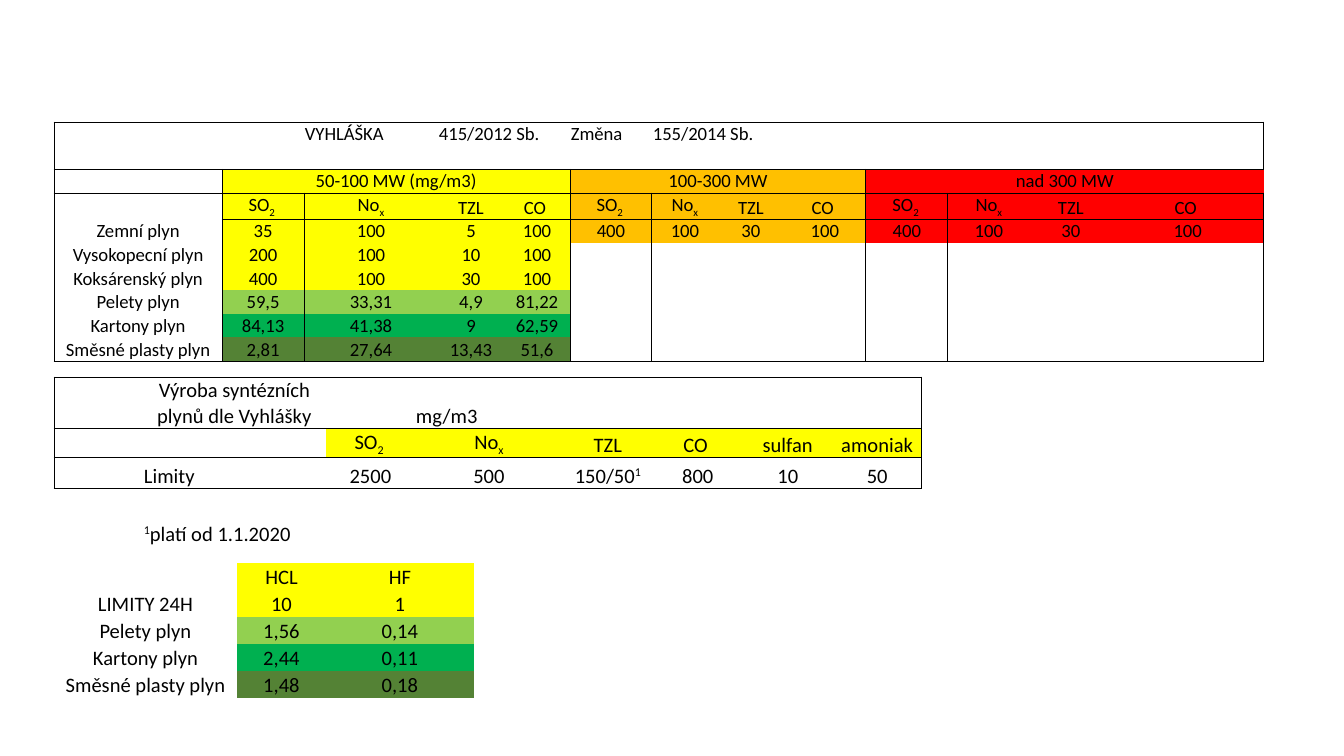
from lxml.etree import SubElement
from pptx import Presentation
from pptx.dml.color import RGBColor
from pptx.enum.text import MSO_ANCHOR as Anchor, PP_ALIGN as Align
from pptx.oxml.ns import qn
from pptx.util import Pt

PX = 914400 / 134.4
YELLOW, ORANGE, RED = "FFFF00", "FFC000", "FF0000"
LIGHT, GREEN, DARK = "92D050", "00B050", "548235"
BASELINES = {"_": "-25000", "^": "30000"}


def px(n):
    return round(n * PX)


def color(value):
    return RGBColor.from_string(value)


prs = Presentation()
prs.slide_width, prs.slide_height = px(1344), px(756)
s = prs.slides.add_slide(prs.slide_layouts[6])

# Cell text: "|" separates runs, "_" starts a subscript and "^" a superscript
gases = ["SO|_2 ", "No|_x", " TZL ", "CO "]
samples = ["Pelety plyn", "Kartony plyn", "Směsné plasty plyn"]
blocks = (1, 5, 9)

# Areas are (first row, first column, last row, last column)
tables = [
    # Emission limits by plant output
    dict(
        at=(54, 122), size=10,
        cols=[168, 82, 134, 66, 66, 82, 66, 66, 82, 82, 82, 82, 152],
        rows=[23, 23, 23, 26] + [23] * 6,
        text=[
            ["", "", "VYHLÁŠKA", "415/2012 Sb.", "", "Změna", "155/2014 Sb."],
            [],
            ["", "50-100 MW (mg/m3)", "", "", "", "100-300 MW", "", "", "", "nad 300 MW"],
            [""] + gases * 3,
            ["Zemní plyn", "35", "100", "5", "100"] + ["400", "100", "30", "100"] * 2,
            ["Vysokopecní plyn", "200", "100", "10", "100"],
            ["Koksárenský plyn", "400", "100", "30", "100"],
            [samples[0], "59,5", "33,31", "4,9", "81,22"],
            [samples[1], "84,13", "41,38", "9", "62,59"],
            [samples[2], "2,81", "27,64", "13,43", "51,6"],
        ],
        left=[(0, c) for c in range(13)],
        merges=[(0, 3, 0, 4), (0, 6, 0, 7)] + [(2, c, 2, c + 3) for c in blocks],
        fills=[(2, 1, 6, 4, YELLOW), (2, 5, 4, 8, ORANGE), (2, 9, 4, 12, RED),
               (7, 1, 7, 4, LIGHT), (8, 1, 8, 4, GREEN), (9, 1, 9, 4, DARK)],
        boxes=[(0, 0, 1, 12), (2, 0, 9, 0)]
        + [(2, c, 2, c + 3) for c in blocks] + [(3, c, 9, c + 3) for c in blocks],
    ),
    # Limits for synthesis gas production
    dict(
        at=(54, 377), size=11,
        cols=[89, 183, 89, 148, 90, 90, 90, 89], rows=[27, 29, 31, 27, 31],
        text=[
            ["", "Výroba syntézních plynů dle Vyhlášky", "", "mg/m3"],
            ["", ""] + gases + ["sulfan", "amoniak"],
            ["", "Limity", "2500", "500", "150/50|^1", "800", "10", "50"],
            [],
            ["", "^1|platí od 1.1.2020"],
        ],
        left=[(0, 3), (2, 1), (4, 1)],
        merges=[],
        fills=[(1, 2, 1, 7, YELLOW)],
        boxes=[(0, 0, 0, 7), (1, 0, 2, 7)],
    ),
    # 24-hour limits
    dict(
        at=(54, 563), size=11, cols=[183, 89, 148], rows=[27] * 5,
        text=[
            ["", "HCL", "HF"],
            ["LIMITY 24H", "10", "1"],
            [samples[0], "1,56", "0,14"],
            [samples[1], "2,44", "0,11"],
            [samples[2], "1,48", "0,18"],
        ],
        left=[], merges=[], boxes=[],
        fills=[(0, 1, 1, 2, YELLOW), (2, 1, 2, 2, LIGHT), (3, 1, 3, 2, GREEN),
               (4, 1, 4, 2, DARK)],
    ),
]

for t in tables:
    cols, rows = t["cols"], t["rows"]
    x, y = t["at"]
    tbl = s.shapes.add_table(len(rows), len(cols), px(x), px(y),
                             px(sum(cols)), px(sum(rows))).table

    # Plain style without grid
    tbl.first_row = tbl.horz_banding = False
    tbl._tbl.tblPr.find(qn("a:tableStyleId")).text = "{2D5ABB26-0587-4C30-8999-92F81FD0307C}"
    for col, w in zip(tbl.columns, cols):
        col.width = px(w)
    for row, h in zip(tbl.rows, rows):
        row.height = px(h)
    for r0, c0, r1, c1 in t["merges"]:
        tbl.cell(r0, c0).merge(tbl.cell(r1, c1))

    for i in range(len(rows)):
        for j in range(len(cols)):
            cell = tbl.cell(i, j)
            cell_format = dict(vertical_anchor=Anchor.BOTTOM, margin_left=px(1),
                               margin_right=px(1), margin_top=px(1), margin_bottom=0)
            for name, value in cell_format.items():
                setattr(cell, name, value)

            # Borders along the edges of the boxes
            edges = set()
            for r0, c0, r1, c1 in t["boxes"]:
                if r0 <= i <= r1 and c0 <= j <= c1:
                    sides = dict(L=j == c0, R=j == c1, T=i == r0, B=i == r1)
                    edges |= {side for side in sides if sides[side]}
            for side in "LRTB":
                if side in edges:
                    ln = SubElement(cell._tc.get_or_add_tcPr(), qn("a:ln" + side), w=str(Pt(0.5)))
                    SubElement(SubElement(ln, qn("a:solidFill")), qn("a:srgbClr"), val="000000")

            # Fill
            cell.fill.background()
            for r0, c0, r1, c1, tone in t["fills"]:
                if r0 <= i <= r1 and c0 <= j <= c1:
                    cell.fill.solid()
                    cell.fill.fore_color.rgb = color(tone)

            # Text
            p = cell.text_frame.paragraphs[0]
            text = t["text"][i][j] if j < len(t["text"][i]) else ""
            if not text:
                SubElement(p._p, qn("a:endParaRPr"), sz=str(t["size"] * 100))
                continue
            p.alignment = Align.LEFT if (i, j) in t["left"] else Align.CENTER
            for part in text.split("|"):
                r = p.add_run()
                r.text = part.lstrip("_^")
                for name, value in dict(name="Calibri", size=Pt(t["size"])).items():
                    setattr(r.font, name, value)
                r.font.color.rgb = color("000000")
                if part[0] in BASELINES:
                    r._r.get_or_add_rPr().set("baseline", BASELINES[part[0]])

prs.save("out.pptx")
